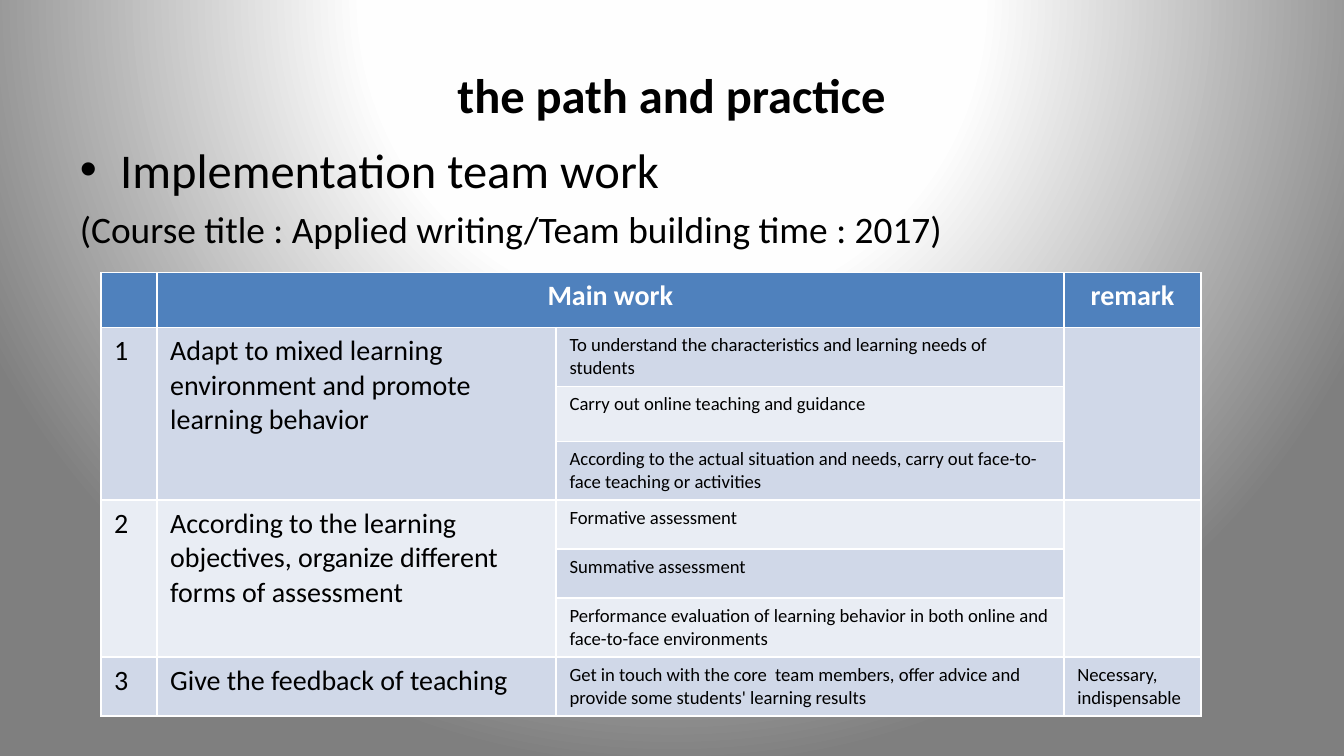
from lxml import etree
from pptx import Presentation
from pptx.dml.color import RGBColor
from pptx.enum.text import MSO_ANCHOR, MSO_AUTO_SIZE, PP_ALIGN
from pptx.oxml import parse_xml
from pptx.oxml.ns import qn
from pptx.util import Pt

CENTER = PP_ALIGN.CENTER
LEFT = PP_ALIGN.LEFT
TOP = MSO_ANCHOR.TOP
MIDDLE = MSO_ANCHOR.MIDDLE
NO_AUTOFIT = MSO_AUTO_SIZE.NONE

BLACK = RGBColor(0x00, 0x00, 0x00)
WHITE = RGBColor(0xFF, 0xFF, 0xFF)
NEAR_WHITE = RGBColor(0xFE, 0xFE, 0xFE)
GREY = RGBColor(0x7F, 0x7F, 0x7F)
HEADER_BLUE = RGBColor(0x4F, 0x81, 0xBD)
DARK_BAND = RGBColor(0xD0, 0xD8, 0xE8)
LIGHT_BAND = RGBColor(0xE9, 0xED, 0xF4)

FONT = "Calibri"
DRAWING = "http://schemas.openxmlformats.org/drawingml/2006/main"
BACKGROUND_STOPS = [(0, WHITE), (40, NEAR_WHITE), (100, GREY)]

COLUMN_WIDTHS = [30, 214, 272, 73.5]
ROW_HEIGHTS = [29.5] * 4 + [26.3] * 3 + [29.5]
WORK_GROUPS = [
    ("Adapt to mixed learning environment and promote learning behavior",
     ["To understand the characteristics and learning needs of students",
      "Carry out online teaching and guidance",
      "According to the actual situation and needs, carry out face-to-face teaching or activities"],
     ""),
    ("According to the learning objectives, organize different forms of assessment",
     ["Formative assessment",
      "Summative assessment",
      "Performance evaluation of learning behavior in both online and face-to-face environments"],
     ""),
    ("Give the feedback of teaching",
     ["Get in touch with the core  team members, offer advice and provide some students' learning results"],
     "Necessary, indispensable"),
]


def paint_background(slide):
    """Fill the slide background with a circular gradient."""
    slide.background.fill.solid()
    stops = "".join(
        f'<a:gs pos="{position * 1000}"><a:srgbClr val="{color}"/></a:gs>'
        for position, color in BACKGROUND_STOPS)
    gradient = parse_xml(
        f'<a:gradFill xmlns:a="{DRAWING}" rotWithShape="1"><a:gsLst>{stops}</a:gsLst>'
        '<a:path path="circle"><a:fillToRect l="50000" t="-80000" r="50000" b="180000"/>'
        '</a:path></a:gradFill>')
    solid = slide.element.find(".//" + qn("p:bgPr")).find(qn("a:solidFill"))
    solid.getparent().replace(solid, gradient)


def format_paragraph(paragraph, size, color=BLACK, bold=False, alignment=LEFT):
    """Apply alignment and font settings to a paragraph and its runs."""
    paragraph.alignment = alignment
    for run in paragraph.runs:
        run.font.name = FONT
        run.font.size = Pt(size)
        run.font.bold = bold
        run.font.color.rgb = color


def place_placeholder(shape, box, anchor):
    """Move a placeholder to its box and return its prepared text frame."""
    shape.left, shape.top, shape.width, shape.height = (Pt(length) for length in box)
    frame = shape.text_frame
    frame.auto_size = NO_AUTOFIT
    frame.word_wrap = True
    frame.vertical_anchor = anchor
    frame.margin_left = frame.margin_right = Pt(6)
    frame.margin_top = frame.margin_bottom = Pt(3)
    return frame


def add_title(slide, box):
    """Write the slide title."""
    frame = place_placeholder(slide.shapes.title, box, MIDDLE)
    frame.text = "the path and practice"
    format_paragraph(frame.paragraphs[0], 26, bold=True, alignment=CENTER)


def add_introduction(slide, box):
    """Write the bulleted heading and the course line below it."""
    frame = place_placeholder(slide.placeholders[1], box, TOP)
    frame.text = "Implementation team work"
    heading = frame.paragraphs[0]
    format_paragraph(heading, 26)
    course = frame.add_paragraph()
    course.text = "(Course title : Applied writing/Team building time : 2017)"
    format_paragraph(course, 20)
    for paragraph, indent in ((heading, Pt(21.6)), (course, 0)):
        properties = paragraph._p.get_or_add_pPr()
        properties.set("marL", str(indent))
        properties.set("indent", str(-indent))
    etree.SubElement(course._p.get_or_add_pPr(), qn("a:buNone"))


def fill_cell(cell, text, size, color=BLACK, bold=False, alignment=LEFT):
    """Write formatted text into a table cell."""
    cell.text = text
    format_paragraph(cell.text_frame.paragraphs[0], size, color, bold, alignment)


def add_work_table(slide, box):
    """Build the table of main work with its merged groups."""
    table = slide.shapes.add_table(
        len(ROW_HEIGHTS), len(COLUMN_WIDTHS), *(Pt(length) for length in box)).table
    for column, width in zip(table.columns, COLUMN_WIDTHS):
        column.width = Pt(width)
    for index, (row, height) in enumerate(zip(table.rows, ROW_HEIGHTS)):
        row.height = Pt(height)
        band = DARK_BAND if index % 2 else LIGHT_BAND
        for cell in row.cells:
            cell.fill.solid()
            cell.fill.fore_color.rgb = band if index else HEADER_BLUE

    table.cell(0, 1).merge(table.cell(0, 2))
    for column, label in ((1, "Main work"), (3, "remark")):
        fill_cell(table.cell(0, column), label, 15, WHITE, True, CENTER)

    first = 1
    for number, (work, tasks, remark) in enumerate(WORK_GROUPS, start=1):
        last = first + len(tasks) - 1
        for column, text, size in ((0, str(number), 15), (1, work, 15), (3, remark, 10)):
            if last > first:
                table.cell(first, column).merge(table.cell(last, column))
            fill_cell(table.cell(first, column), text, size)
        for row, task in enumerate(tasks, start=first):
            fill_cell(table.cell(row, 2), task, 10)
        first = last + 1


def main():
    """Create the presentation and save it."""
    presentation = Presentation()
    presentation.slide_width = Pt(720)
    presentation.slide_height = Pt(405)
    slide = presentation.slides.add_slide(presentation.slide_layouts[1])
    paint_background(slide)
    add_title(slide, (36, 16.5, 648, 67.5))
    add_introduction(slide, (36.75, 72, 648, 267))
    add_work_table(slide, (54, 146, sum(COLUMN_WIDTHS), sum(ROW_HEIGHTS)))
    presentation.save("out.pptx")


if __name__ == "__main__":
    main()
